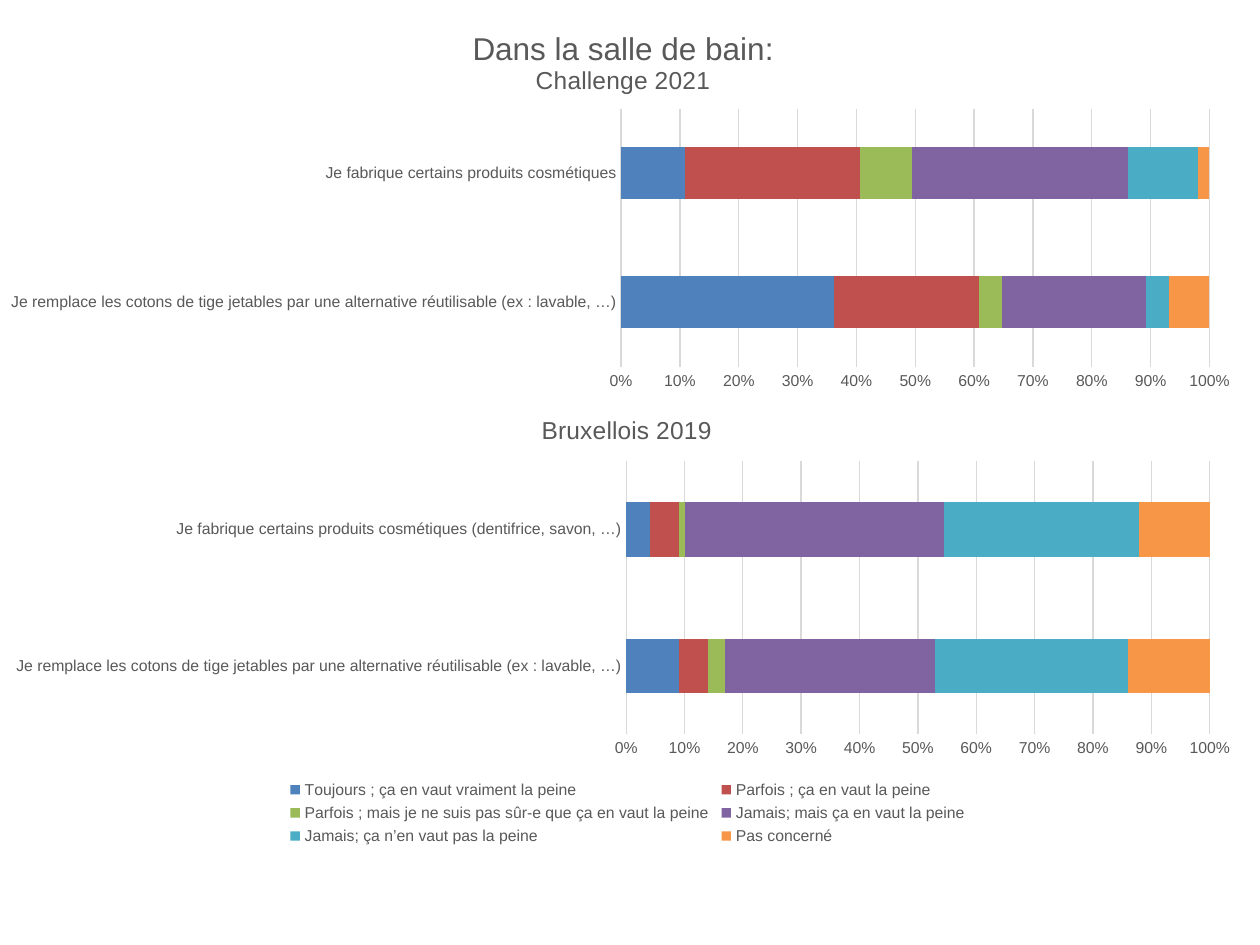
from dataclasses import dataclass
from typing import Optional

from lxml import etree
from pptx import Presentation
from pptx.chart.data import CategoryChartData
from pptx.dml.color import RGBColor
from pptx.enum.chart import XL_CHART_TYPE, XL_LEGEND_POSITION, XL_TICK_LABEL_POSITION, XL_TICK_MARK
from pptx.oxml.ns import qn
from pptx.util import Inches, Pt

STACKED_BAR = XL_CHART_TYPE.BAR_STACKED_100
LEGEND_BOTTOM = XL_LEGEND_POSITION.BOTTOM
LABELS_BY_AXIS = XL_TICK_LABEL_POSITION.NEXT_TO_AXIS
NO_TICK = XL_TICK_MARK.NONE

SLIDE_WIDTH, SLIDE_HEIGHT = 10, 7.5
FONT = "Arial"
COLORS = {
    "text": "595959",
    "grid": "D9D9D9",
    "always": "4F81BD",
    "worthwhile": "C0504D",
    "unsure": "9BBB59",
    "never_worthwhile": "8064A2",
    "never": "4BACC6",
    "not_concerned": "F79646",
}
ANSWERS = {
    "always": "Toujours ; ça en vaut vraiment la peine",
    "worthwhile": "Parfois ; ça en vaut la peine",
    "unsure": "Parfois ; mais je ne suis pas sûr-e que ça en vaut la peine",
    "never_worthwhile": "Jamais; mais ça en vaut la peine",
    "never": "Jamais; ça n’en vaut pas la peine",
    "not_concerned": "Pas concerné",
}
SWABS = "Je remplace les cotons de tige jetables par une alternative réutilisable (ex : lavable, …)"
COSMETICS = "Je fabrique certains produits cosmétiques"


@dataclass
class Survey:
    box: tuple[float, float, float, float]
    title: list[tuple[str, int]]
    title_percents: dict[str, float]
    plot_percents: dict[str, float]
    results: dict[str, list[int]]
    series_names: list[str]
    legend_percents: Optional[dict[str, float]] = None


SURVEYS = [
    Survey(
        box=(-0.04, 0.09, 10, 3.07),
        title=[("Dans la salle de bain:", 18), ("Challenge 2021", 14)],
        title_percents={"x": 37.6, "y": 3.7},
        plot_percents={"x": 49.7, "y": 25.2, "w": 46.7, "h": 66.7},
        results={SWABS: [37, 25, 4, 25, 4, 7], COSMETICS: [11, 30, 9, 37, 12, 2]},
        series_names=[f"Series {number}" for number in range(1, 7)],
    ),
    Survey(
        box=(0, 3.12, 9.96, 3.63),
        title=[("Bruxellois 2019", 14)],
        title_percents={"x": 42.8, "y": 3.7},
        plot_percents={"x": 49.9, "y": 14.9, "w": 46.5, "h": 59.7},
        results={
            SWABS: [9, 5, 3, 36, 33, 14],
            f"{COSMETICS} (dentifrice, savon, …)": [4, 5, 1, 44, 33, 12],
        },
        series_names=list(ANSWERS.values()),
        legend_percents={"x": 22.5, "y": 83.7, "w": 55, "h": 16.2},
    ),
]


def set_values(target, values: dict) -> None:
    for name, value in values.items():
        setattr(target, name, value)


def format_font(font, size: int) -> None:
    set_values(font, {"name": FONT, "size": Pt(size), "bold": False})
    font.color.rgb = RGBColor.from_string(COLORS["text"])


def format_line(line) -> None:
    line.color.rgb = RGBColor.from_string(COLORS["grid"])
    line.width = Pt(0.75)


def place(element, index: int, percents: dict[str, float], inner: bool = False) -> None:
    for old_layout in element.findall(qn("c:layout")):
        element.remove(old_layout)
    layout = etree.Element(qn("c:layout"))
    manual = etree.SubElement(layout, qn("c:manualLayout"))
    if inner:
        etree.SubElement(manual, qn("c:layoutTarget")).set("val", "inner")
    for side in "xy":
        etree.SubElement(manual, qn(f"c:{side}Mode")).set("val", "edge")
    for name, percent in percents.items():
        etree.SubElement(manual, qn(f"c:{name}")).set("val", str(percent / 100))
    element.insert(index, layout)


def add_title(chart, survey: Survey) -> None:
    chart.has_title = True
    title = chart.chart_title
    frame = title.text_frame
    for index, (text, size) in enumerate(survey.title):
        paragraph = frame.add_paragraph() if index else frame.paragraphs[0]
        run = paragraph.add_run()
        run.text = text
        format_font(run.font, size)
    place(title._element, 1, survey.title_percents)


def format_axes(chart) -> None:
    for axis in (chart.category_axis, chart.value_axis):
        set_values(axis, {"major_tick_mark": NO_TICK, "minor_tick_mark": NO_TICK,
                          "tick_label_position": LABELS_BY_AXIS})
        format_font(axis.tick_labels.font, 9)
    format_line(chart.category_axis.format.line)
    value_axis = chart.value_axis
    value_axis.has_major_gridlines = True
    format_line(value_axis.major_gridlines.format.line)
    value_axis.format.line.fill.background()
    set_values(value_axis.tick_labels, {"number_format": "0%", "number_format_is_linked": False})


def add_survey_chart(slide, survey: Survey) -> None:
    data = CategoryChartData(number_format="0")
    data.categories = list(survey.results)
    for name, values in zip(survey.series_names, zip(*survey.results.values())):
        data.add_series(name, values)
    box = [Inches(length) for length in survey.box]
    chart = slide.shapes.add_chart(STACKED_BAR, *box, data).chart
    format_font(chart.font, 10)
    add_title(chart, survey)
    format_axes(chart)
    plot = chart.plots[0]
    set_values(plot, {"gap_width": 150, "overlap": 100, "vary_by_categories": False})
    for series, answer in zip(plot.series, ANSWERS):
        series.format.fill.solid()
        series.format.fill.fore_color.rgb = RGBColor.from_string(COLORS[answer])
    place(chart._chartSpace.chart.plotArea, 0, survey.plot_percents, inner=True)
    chart.has_legend = survey.legend_percents is not None
    if chart.has_legend:
        set_values(chart.legend, {"position": LEGEND_BOTTOM, "include_in_layout": False})
        format_font(chart.legend.font, 9)
        place(chart.legend._element, 1, survey.legend_percents)


def main() -> None:
    presentation = Presentation()
    set_values(presentation, {"slide_width": Inches(SLIDE_WIDTH),
                              "slide_height": Inches(SLIDE_HEIGHT)})
    slide = presentation.slides.add_slide(presentation.slide_layouts[6])
    for survey in SURVEYS:
        add_survey_chart(slide, survey)
    presentation.save("out.pptx")


if __name__ == "__main__":
    main()
